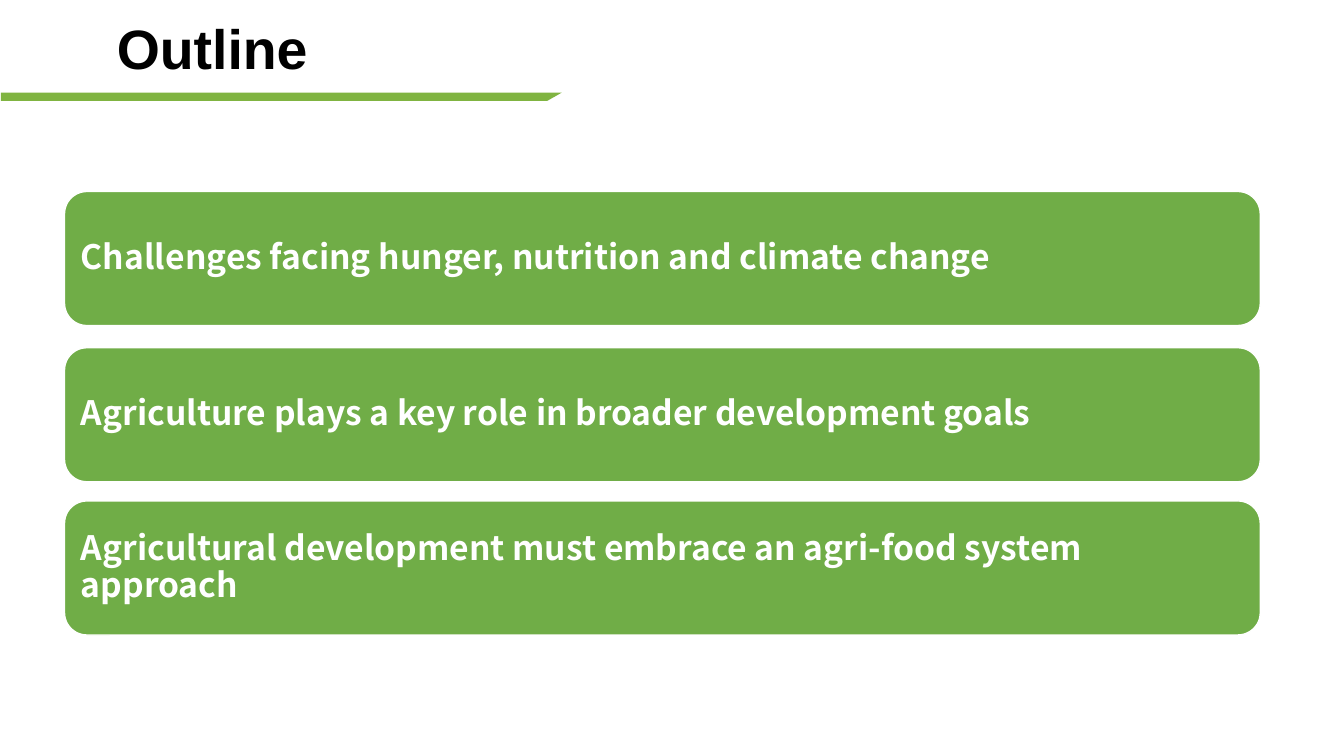
from pptx import Presentation
from pptx.dml.color import RGBColor
from pptx.enum.shapes import MSO_SHAPE
from pptx.enum.text import MSO_ANCHOR, PP_ALIGN
from pptx.util import Pt

PX = 9144  # EMU in one px, at 100 px to the inch

THEME = {
    "rule": RGBColor(0x80, 0xB4, 0x41),
    "card": RGBColor(0x70, 0xAD, 0x47),
    "white": RGBColor(0xFF, 0xFF, 0xFF),
    "title": {"name": "Arial", "size": Pt(39.6), "bold": True,
              "color": RGBColor(0, 0, 0)},
    "topic": {"name": "Noto Sans CJK SC", "size": Pt(24), "bold": True,
              "color": RGBColor(0xFF, 0xFF, 0xFF)},
}

TOPICS = [
    (190, "Challenges facing hunger, nutrition and climate change"),
    (345, "Agriculture plays a key role in broader development goals"),
    (497, "Agricultural development must embrace an agri-food system approach"),
]


def px(*lengths):
    return [length * PX for length in lengths]


def write(shape, text, style):
    """Fill a shape with one left-aligned, vertically centred paragraph."""
    frame = shape.text_frame
    frame.word_wrap = True
    frame.vertical_anchor = MSO_ANCHOR.MIDDLE
    paragraph = frame.paragraphs[0]
    paragraph.alignment = PP_ALIGN.LEFT
    paragraph.line_spacing = 0.9
    run = paragraph.add_run()
    run.text = text
    for attribute, value in style.items():
        if attribute == "color":
            run.font.color.rgb = value
        else:
            setattr(run.font, attribute, value)


deck = Presentation()
deck.slide_width, deck.slide_height = px(1333, 750)
slide = deck.slides.add_slide(deck.slide_layouts[6])

# Slanted rule under the title
outline = slide.shapes.build_freeform(1, 92, scale=PX)
outline.add_line_segments([(1, 100), (543, 100), (557, 92)], close=True)
title_rule = outline.convert_to_shape()
title_rule.shadow.inherit = False
title_rule.fill.solid()
title_rule.fill.fore_color.rgb = THEME["rule"]
title_rule.line.fill.background()

title = slide.shapes.add_textbox(*px(106, 15, 1135, 72))
write(title, "Outline", THEME["title"])

# One rounded card per topic
for top, topic in TOPICS:
    card = slide.shapes.add_shape(
        MSO_SHAPE.ROUNDED_RECTANGLE, *px(64, top, 1186, 133))
    card.shadow.inherit = False
    card.fill.solid()
    card.fill.fore_color.rgb = THEME["card"]
    card.line.color.rgb = THEME["white"]
    card.line.width = Pt(1)
    write(card, topic, THEME["topic"])

deck.save("out.pptx")
